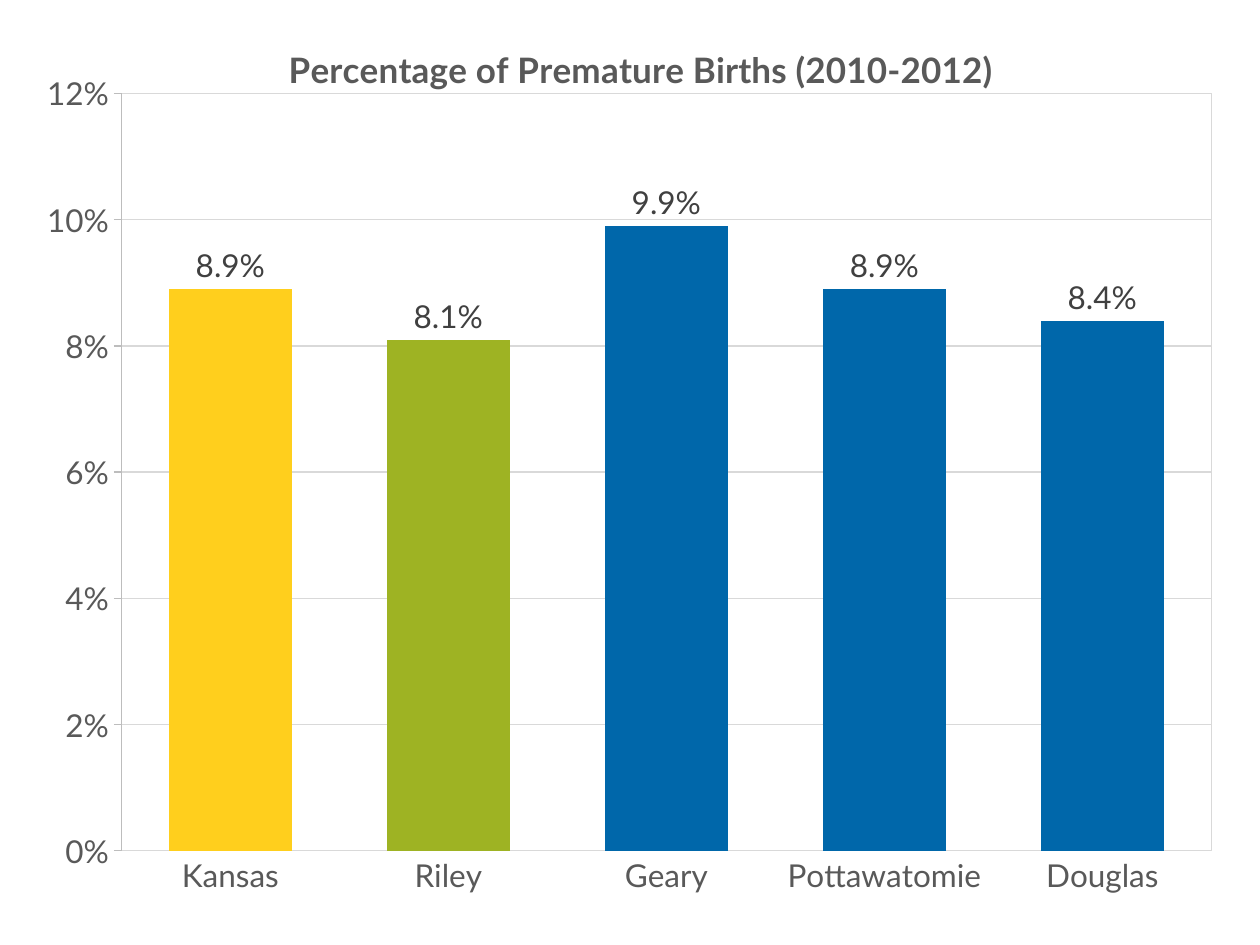
from typing import NamedTuple

from lxml.etree import SubElement
from pptx import Presentation
from pptx.chart.data import CategoryChartData as ChartData
from pptx.dml.color import RGBColor
from pptx.enum.chart import XL_CHART_TYPE as Kind
from pptx.enum.chart import XL_LABEL_POSITION as Spot
from pptx.enum.chart import XL_TICK_MARK as Tick
from pptx.oxml import parse_xml
from pptx.oxml.ns import nsdecls, qn
from pptx.util import Cm, Pt

HUES = {
    "state": "FFCF1D",
    "home": "9EB323",
    "peer": "0067AA",
    "text": "595959",
    "label": "404040",
    "grid": "D9D9D9",
    "axis": "BDBDBD",
}
FACE = "Lato"


class Bar(NamedTuple):
    place: str
    rate: float
    hue: str


BARS = [
    Bar("Kansas", 0.089, "state"),
    Bar("Riley", 0.081, "home"),
    Bar("Geary", 0.099, "peer"),
    Bar("Pottawatomie", 0.089, "peer"),
    Bar("Douglas", 0.084, "peer"),
]


def color(hue: str) -> RGBColor:
    return RGBColor.from_string(HUES[hue])


def set_font(font, size: int, hue: str, bold: bool = False) -> None:
    font.name = FACE
    font.size = Pt(size)
    font.bold = bold
    font.color.rgb = color(hue)


def set_line(line, hue: str) -> None:
    line.width = Pt(0.75)
    line.color.rgb = color(hue)


def make_layout(**parts):
    """Build a manual chart layout from tag and value pairs."""
    layout = parse_xml(f"<c:layout {nsdecls('c')}><c:manualLayout/></c:layout>")
    for tag, val in parts.items():
        SubElement(layout[0], qn(f"c:{tag}")).set("val", str(val))
    return layout


def set_title(chart) -> None:
    frame = chart.chart_title.text_frame
    frame.text = "Percentage of Premature Births (2010-2012)"
    set_font(frame.paragraphs[0].runs[0].font, 20, "text", True)
    title = chart._chartSpace.chart.find(qn("c:title"))
    for old in title.findall(qn("c:layout")):
        title.remove(old)
    title.find(qn("c:tx")).addnext(
        make_layout(xMode="edge", yMode="edge", x=0.22, y=0.04)
    )
    chart.chart_title.include_in_layout = False


def set_axes(chart) -> None:
    cat, val = chart.category_axis, chart.value_axis
    for axis, tick, hue in ((cat, Tick.NONE, "grid"), (val, Tick.OUTSIDE, "axis")):
        axis.major_tick_mark = tick
        axis.minor_tick_mark = Tick.NONE
        set_font(axis.tick_labels.font, 18, "text")
        set_line(axis.format.line, hue)
    val.minimum_scale, val.maximum_scale, val.major_unit = 0, 0.12, 0.02
    val.tick_labels.number_format = "0%"
    val.tick_labels.number_format_is_linked = False
    set_line(val.major_gridlines.format.line, "grid")


def set_bars(chart) -> None:
    plot = chart.plots[0]
    plot.gap_width = 77
    plot.vary_by_categories = False
    for i, bar in enumerate(BARS):
        fill = plot.series[0].points[i].format.fill
        fill.solid()
        fill.fore_color.rgb = color(bar.hue)
    labels = plot.series[0].data_labels
    labels.show_value = True
    labels.number_format = "0.0%"
    labels.number_format_is_linked = False
    labels.position = Spot.OUTSIDE_END
    set_font(labels.font, 18, "label")


def set_area(chart) -> None:
    """Place the plot area and give it a thin border."""
    area = chart._chartSpace.chart.plotArea
    for old in area.findall(qn("c:layout")):
        area.remove(old)
    area.insert(0, make_layout(layoutTarget="inner", xMode="edge", yMode="edge",
                               x=0.09, y=0.1, w=0.88, h=0.81))
    area.append(parse_xml(
        f"<c:spPr {nsdecls('c', 'a')}><a:noFill/><a:ln w=\"{Pt(0.75)}\"><a:solidFill>"
        f"<a:srgbClr val=\"{HUES['grid']}\"/></a:solidFill></a:ln></c:spPr>"
    ))


def main() -> None:
    deck = Presentation()
    deck.slide_width, deck.slide_height = Cm(25.4), Cm(19.05)
    slide = deck.slides.add_slide(deck.slide_layouts[6])

    data = ChartData(number_format="0.0%")
    data.categories = [bar.place for bar in BARS]
    data.add_series("Series 1", [bar.rate for bar in BARS])
    chart = slide.shapes.add_chart(
        Kind.COLUMN_CLUSTERED, Cm(0.2), Cm(0), Cm(24.97), Cm(18.85), data
    ).chart
    chart.has_legend = False
    chart.font.name = "Calibri"
    chart.font.size = Pt(10)

    set_title(chart)
    set_axes(chart)
    set_bars(chart)
    set_area(chart)
    deck.save("out.pptx")


if __name__ == "__main__":
    main()
